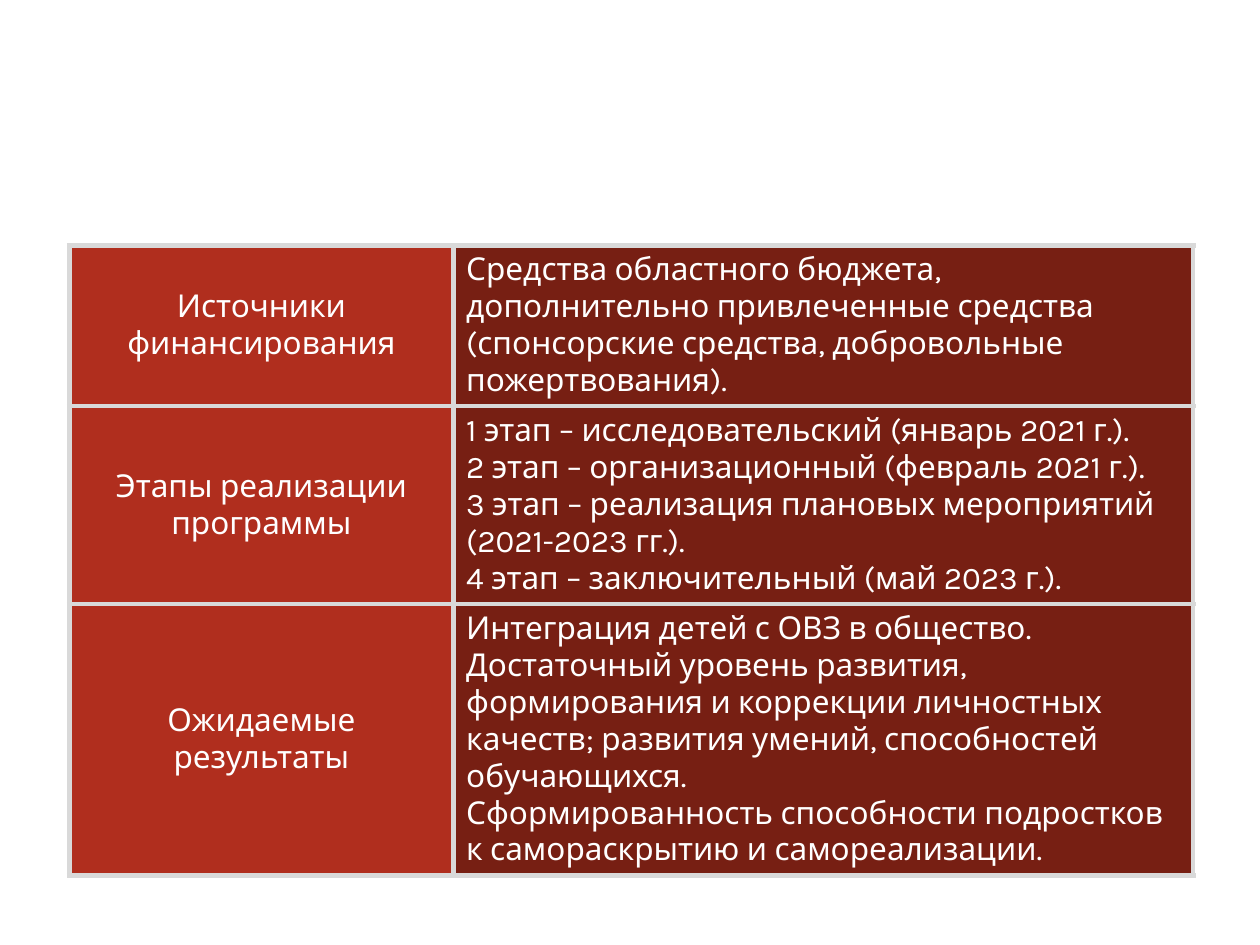
"""Build a slide with a table of programme funding, stages and results."""
from dataclasses import dataclass

from lxml import etree
from pptx import Presentation
from pptx import util as u
from pptx.dml.color import RGBColor
from pptx.enum import text
from pptx.oxml import ns

WHITE = RGBColor(0xFF, 0xFF, 0xFF)
RED = RGBColor(0xB0, 0x2E, 0x1E)
DARK = RGBColor(0x77, 0x1F, 0x13)
GREY = RGBColor(0xD9, 0xD9, 0xD9)
FONT = {"name": "Karla", "size": u.Pt(18), "bold": False}
WIDTHS = (3.05, 5.87)


@dataclass
class Row:
    head: str
    lines: list[str]
    high: float


ROWS = [
    Row("Источники финансирования", [
        "Средства областного бюджета, дополнительно привлеченные средства "
        "(спонсорские средства, добровольные пожертвования).",
    ], 1.27),
    Row("Этапы реализации программы", [
        "1 этап – исследовательский (январь 2021 г.).",
        "2 этап – организационный (февраль 2021 г.).",
        "3 этап – реализация плановых мероприятий (2021-2023 гг.).",
        "4 этап – заключительный (май 2023 г.).",
    ], 1.57),
    Row("Ожидаемые результаты", [
        "Интеграция детей с ОВЗ в общество.",
        "Достаточный уровень развития, формирования и коррекции личностных "
        "качеств; развития умений, способностей обучающихся.",
        "Сформированность способности подростков к самораскрытию и самореализации.",
    ], 2.15),
]


def edge(cell) -> None:
    props = cell._tc.get_or_add_tcPr()
    for spot, side in enumerate(("lnL", "lnR", "lnT", "lnB")):
        line = etree.Element(ns.qn(f"a:{side}"), w=str(u.Pt(3)))
        fill = etree.SubElement(line, ns.qn("a:solidFill"))
        etree.SubElement(fill, ns.qn("a:srgbClr"), val=str(GREY))
        props.insert(spot, line)


def draw(cell, lines: list[str], fill: RGBColor, align, anchor) -> None:
    cell.fill.solid()
    cell.fill.fore_color.rgb = fill
    cell.vertical_anchor = anchor
    cell.text = "\n".join(lines)
    for para in cell.text_frame.paragraphs:
        para.alignment = align
        font = para.runs[0].font
        for key, value in FONT.items():
            setattr(font, key, value)
        font.color.rgb = WHITE
    edge(cell)


def main() -> None:
    deck = Presentation()
    deck.slide_width, deck.slide_height = u.Inches(10), u.Inches(7.5)
    slide = deck.slides.add_slide(deck.slide_layouts[6])
    table = slide.shapes.add_table(
        len(ROWS), len(WIDTHS), u.Inches(0.55), u.Inches(1.95),
        u.Inches(sum(WIDTHS)), u.Inches(sum(row.high for row in ROWS))).table
    table.first_row = table.horz_banding = False
    for column, width in zip(table.columns, WIDTHS):
        column.width = u.Inches(width)
    for line, row in zip(table.rows, ROWS):
        line.height = u.Inches(row.high)
        head, body = line.cells
        draw(head, [row.head], RED, text.PP_ALIGN.CENTER, text.MSO_ANCHOR.MIDDLE)
        draw(body, row.lines, DARK, text.PP_ALIGN.LEFT, text.MSO_ANCHOR.TOP)
    deck.save("out.pptx")


if __name__ == "__main__":
    main()
